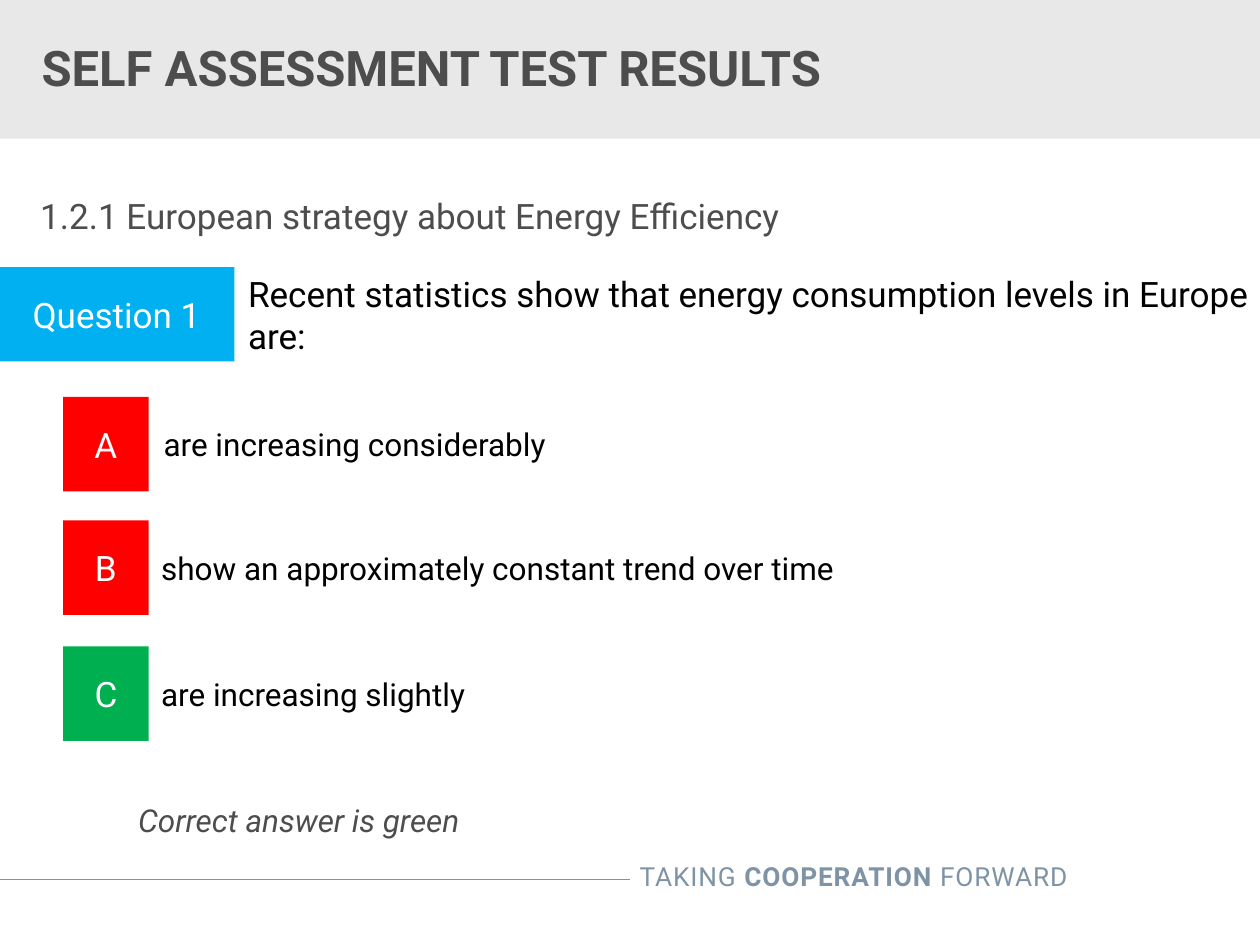
"""Build the self assessment test results slide."""
from lxml import etree
from pptx import Presentation
from pptx.dml.color import RGBColor
from pptx.enum.shapes import MSO_CONNECTOR as CONNECTOR, MSO_SHAPE as SHAPE
from pptx.enum.text import MSO_ANCHOR as ANCHOR, MSO_AUTO_SIZE as AUTO_SIZE, PP_ALIGN as ALIGN
from pptx.oxml.ns import qn
from pptx.util import Pt

COLORS = {
    "band": "E8E8E8", "slate": "7E93A5", "gray": "4D4D4E", "black": "000000",
    "white": "FFFFFF", "blue": "00B0F0", "wrong": "FF0000", "correct": "00B050",
}
FONT = "Roboto"
ROW_HEIGHT = 54


def write(shape, text, size, color, align=ALIGN.LEFT, anchor=ANCHOR.MIDDLE):
    frame = shape.text_frame
    frame.auto_size = AUTO_SIZE.NONE
    frame.word_wrap = True
    frame.vertical_anchor = anchor
    paragraph = frame.paragraphs[0]
    paragraph.text = text
    paragraph.alignment = align
    paragraph.font.name = FONT
    paragraph.font.size = Pt(size)
    paragraph.font.color.rgb = RGBColor.from_string(COLORS[color])
    return paragraph


def add_block(left, top, width, height, fill):
    block = slide.shapes.add_shape(SHAPE.RECTANGLE, Pt(left), Pt(top), Pt(width), Pt(height))
    block.shadow.inherit = False
    block.fill.solid()
    block.fill.fore_color.rgb = RGBColor.from_string(COLORS[fill])
    block.line.fill.background()
    return block


presentation = Presentation()
presentation.slide_width, presentation.slide_height = Pt(720), Pt(540)
slide = presentation.slides.add_slide(presentation.slide_layouts[1])
title, body = slide.shapes.title, slide.placeholders[1]

band = add_block(0, 0, 720, 79.2, "band")
title.element.addprevious(band.element)

title.left, title.top, title.width, title.height = Pt(-0.7), Pt(11.5), Pt(519), Pt(54)
title.text_frame.margin_left = Pt(24.5)
write(title, "SELF ASSESSMENT TEST RESULTS", 28, "gray").font.bold = True

body.left, body.top, body.width, body.height = Pt(23), Pt(111), Pt(674), Pt(24.5)
frame = body.text_frame
frame.margin_left = frame.margin_top = frame.margin_right = frame.margin_bottom = 0
properties = frame.paragraphs[0]._p.get_or_add_pPr()
properties.set("marL", "0")
properties.set("indent", "0")
etree.SubElement(properties, qn("a:buNone"))
heading = write(body, "1.2.1 European strategy about Energy Efficiency", 20, "gray", anchor=ANCHOR.TOP)
heading.space_before = Pt(0)

rows = [
    ("Question 1", "Recent statistics show that energy consumption levels in Europe are:",
     "blue", -0.7, 134.7, 134.7, 152.6, 20),
    ("A", "are increasing considerably", "wrong", 36, 49, 86.4, 226.8, 18),
    ("B", "show an approximately constant trend over time", "wrong", 36, 49, 85, 297.4, 18),
    ("C", "are increasing slightly", "correct", 36, 49, 85, 369.4, 18),
]
for label, text, fill, left, width, text_left, top, size in rows:
    block = add_block(left, top, width, ROW_HEIGHT, fill)
    write(block, label, 20, "white", ALIGN.CENTER)
    text_box = slide.shapes.add_textbox(Pt(text_left), Pt(top), Pt(587), Pt(ROW_HEIGHT))
    write(text_box, text, size, "black")

note = slide.shapes.add_textbox(Pt(71.8), Pt(454), Pt(400), Pt(29))
write(note, "Correct answer is green", 18, "gray").font.italic = True

rule = slide.shapes.add_connector(CONNECTOR.STRAIGHT, Pt(-0.7), Pt(502.6), Pt(360), Pt(502.6))
rule.line.color.rgb = RGBColor.from_string(COLORS["slate"])
rule.line.width = Pt(0.75)
etree.SubElement(rule.element.spPr, qn("a:effectLst"))

slogan = slide.shapes.add_textbox(Pt(279.4), Pt(488.2), Pt(337.7), Pt(25.2))
paragraph = write(slogan, "", 15, "slate", ALIGN.RIGHT, ANCHOR.TOP)
for text, bold in [("TAKING ", False), ("COOPERATION", True), (" FORWARD", False)]:
    run = paragraph.add_run()
    run.text = text
    run.font.bold = bold
    run._r.get_or_add_rPr().set("spc", "50")

presentation.save("out.pptx")
